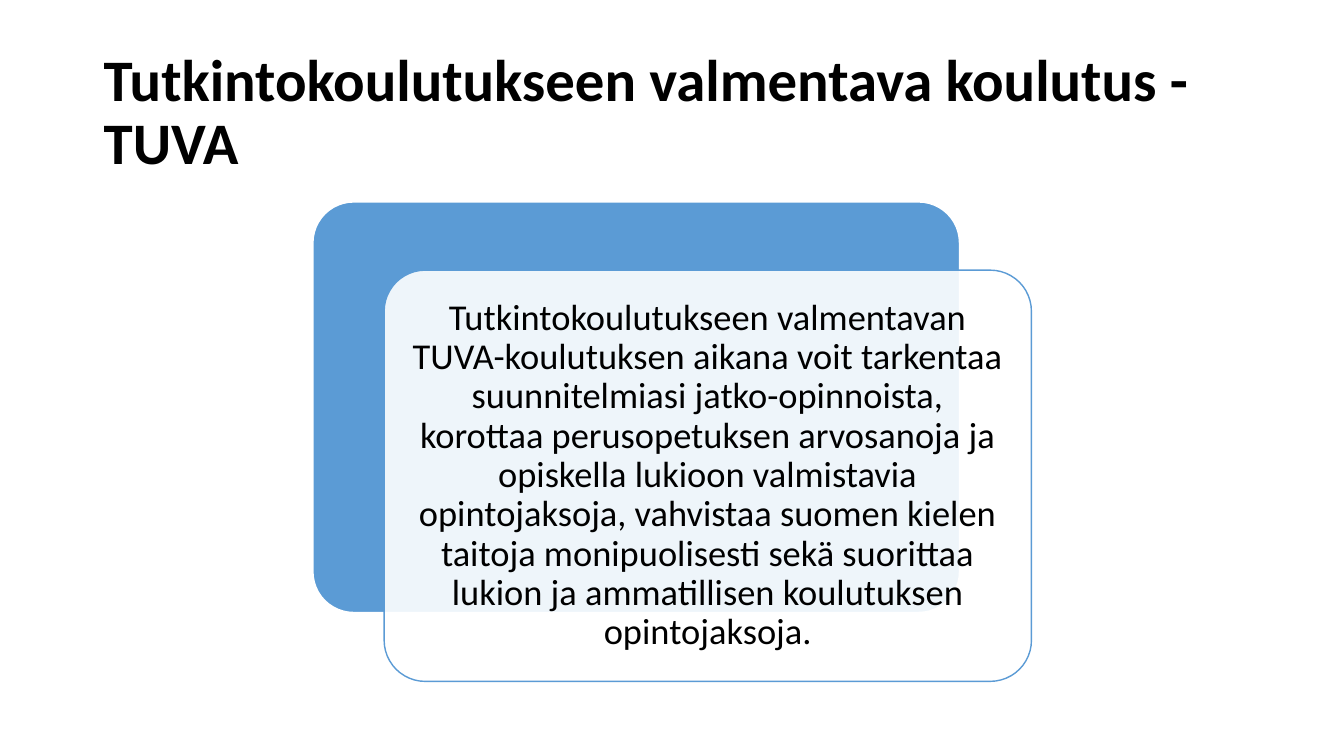
from lxml.etree import SubElement
from pptx import Presentation
from pptx.dml.color import RGBColor
from pptx.enum.shapes import MSO_SHAPE as Preset
from pptx.enum.text import MSO_ANCHOR as Anchor, PP_ALIGN as Align
from pptx.oxml.ns import qn
from pptx.util import Inches, Pt

TITLE = "Tutkintokoulutukseen valmentava koulutus - TUVA"
BODY = (
    "Tutkintokoulutukseen valmentavan TUVA-koulutuksen aikana voit tarkentaa "
    "suunnitelmiasi jatko-opinnoista, korottaa perusopetuksen arvosanoja ja "
    "opiskella lukioon valmistavia opintojaksoja, vahvistaa suomen kielen "
    "taitoja monipuolisesti sekä suorittaa lukion ja ammatillisen koulutuksen "
    "opintojaksoja."
)
BLUE, WHITE, BLACK = "5B9BD5", "FFFFFF", "000000"
CARD_SIZE = (6.42, 4.08)
CARD_LEFT, CARD_TOP = 3.1, 2
CARD_SHIFT_X, CARD_SHIFT_Y = 0.71, 0.68
TEXT_MARGIN = 0.12


def color(value):
    return RGBColor.from_string(value)


class SlideBuilder:
    font = "Calibri"
    line_spacing = 0.9
    corner = 0.1

    def __init__(self, presentation):
        self.slide = presentation.slides.add_slide(presentation.slide_layouts[6])

    def card(self, left, top, fill, line, line_width, opacity=100):
        """Add a rounded card; opacity is a percentage."""
        shape = self.slide.shapes.add_shape(
            Preset.ROUNDED_RECTANGLE,
            *map(Inches, (left, top, *CARD_SIZE)),
        )
        shape.adjustments[0] = self.corner
        shape.shadow.inherit = False
        shape.fill.solid()
        shape.fill.fore_color.rgb = color(fill)
        shape.line.color.rgb = color(line)
        shape.line.width = Pt(line_width)
        if opacity < 100:
            fill_color = shape.fill._xPr.find(qn("a:solidFill"))[0]
            SubElement(fill_color, qn("a:alpha"), val=str(opacity * 1000))

    def text(self, box, content, size, bold=False, align=Align.LEFT, inset=None):
        """Add a wrapped, vertically centred text; inset is for all four sides."""
        frame = self.slide.shapes.add_textbox(*map(Inches, box)).text_frame
        frame.word_wrap = True
        frame.vertical_anchor = Anchor.MIDDLE
        if inset is not None:
            frame.margin_left = frame.margin_right = Inches(inset)
            frame.margin_top = frame.margin_bottom = Inches(inset)
        paragraph = frame.paragraphs[0]
        paragraph.alignment = align
        paragraph.line_spacing = self.line_spacing
        run = paragraph.add_run()
        run.text = content
        run.font.name = self.font
        run.font.size = Pt(size)
        run.font.bold = bold
        run.font.color.rgb = color(BLACK)


def main():
    presentation = Presentation()
    presentation.slide_width = Inches(13.33)
    presentation.slide_height = Inches(7.5)
    builder = SlideBuilder(presentation)

    builder.text((0.93, 0.4, 11.49, 1.46), TITLE, 42, bold=True)

    front_left, front_top = CARD_LEFT + CARD_SHIFT_X, CARD_TOP + CARD_SHIFT_Y
    builder.card(CARD_LEFT, CARD_TOP, BLUE, WHITE, 1.5)
    builder.card(front_left, front_top, WHITE, BLUE, 1, opacity=90)

    width, height = (side - 2 * TEXT_MARGIN for side in CARD_SIZE)
    body_box = (front_left + TEXT_MARGIN, front_top + TEXT_MARGIN, width, height)
    builder.text(body_box, BODY, 26, align=Align.CENTER, inset=0.11)

    presentation.save("out.pptx")


if __name__ == "__main__":
    main()
